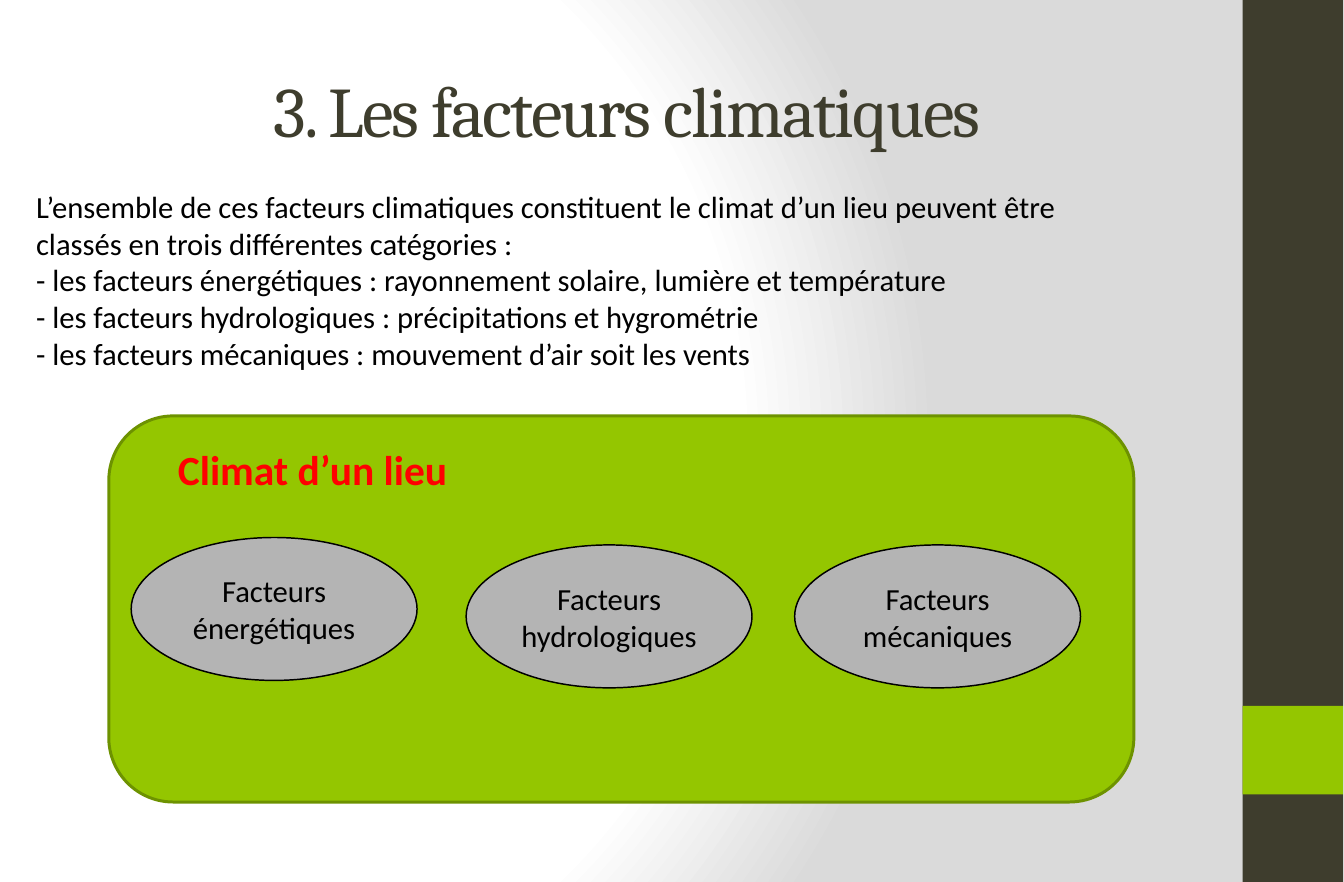
import dataclasses

import pptx
import pptx.dml.color
import pptx.enum.shapes
import pptx.enum.text
import pptx.oxml
import pptx.oxml.ns
import pptx.util

Inches = pptx.util.Inches
Pt = pptx.util.Pt
PresetShape = pptx.enum.shapes.MSO_SHAPE
Anchor = pptx.enum.text.MSO_ANCHOR
Align = pptx.enum.text.PP_ALIGN


@dataclasses.dataclass(frozen=True)
class Theme:
    heading_font: str = "Cambria"
    body_font: str = "Calibri"
    title_size: float = 48
    body_size: float = 20.7
    caption_size: float = 28
    dark: str = "3E3D2D"
    green: str = "94C600"
    green_edge: str = "6D9200"
    grey: str = "B4B4B4"
    backdrop_edge: str = "DADADA"
    white: str = "FFFFFF"
    black: str = "000000"
    red: str = "FF0000"


@dataclasses.dataclass(frozen=True)
class Box:
    left: float
    top: float
    width: float
    height: float

    def lengths(self) -> tuple:
        return tuple(Inches(value) for value in dataclasses.astuple(self))


@dataclasses.dataclass(frozen=True)
class Factor:
    label: str
    left: float
    top: float


THEME = Theme()
WIDTH, HEIGHT = 12.6, 8.27
BAND_LEFT, BAND_WIDTH = 11.65, 0.94
OVAL_WIDTH, OVAL_HEIGHT = 2.68, 1.34
FACTORS = [
    Factor("Facteurs énergétiques", 1.23, 5.04),
    Factor("Facteurs hydrologiques", 4.37, 5.11),
    Factor("Facteurs mécaniques", 7.45, 5.11),
]
INTRODUCTION = [
    "L’ensemble de ces facteurs climatiques constituent le climat d’un lieu "
    "peuvent être classés en trois différentes catégories :",
    "- les facteurs énergétiques : rayonnement solaire, lumière et température",
    "- les facteurs hydrologiques : précipitations et hygrométrie",
    "- les facteurs mécaniques : mouvement d’air soit les vents",
]


def rgb(code: str) -> pptx.dml.color.RGBColor:
    return pptx.dml.color.RGBColor.from_string(code)


def add_run(paragraph, text: str, size: float = THEME.body_size,
            color: str = THEME.black, font: str = THEME.body_font,
            bold: bool = False):
    run = paragraph.add_run()
    run.text = text
    run.font.name = font
    run.font.size = Pt(size)
    run.font.bold = bold
    run.font.color.rgb = rgb(color)
    return run


def add_filled_shape(slide, preset, box: Box, fill: str,
                     edge: str = "", edge_width: float = 1):
    """Add a flat shape; without an edge colour it has no outline."""
    shape = slide.shapes.add_shape(preset, *box.lengths())
    shape.shadow.inherit = False
    shape.fill.solid()
    shape.fill.fore_color.rgb = rgb(fill)
    if edge:
        shape.line.color.rgb = rgb(edge)
        shape.line.width = Pt(edge_width)
    else:
        shape.line.fill.background()
    return shape


def paint_background(slide) -> None:
    """Give the slide a circular gradient centred towards the left."""
    slide.background.fill.solid()
    stops = [(0, THEME.white), (75, THEME.white), (100, THEME.backdrop_edge)]
    stop_xml = "".join(
        f'<a:gs pos="{position * 1000}"><a:srgbClr val="{color}"/></a:gs>'
        for position, color in stops
    )
    gradient = pptx.oxml.parse_xml(
        f'<a:gradFill {pptx.oxml.ns.nsdecls("a")} rotWithShape="1">'
        f'<a:gsLst>{stop_xml}</a:gsLst><a:path path="circle">'
        '<a:fillToRect l="20000" t="50000" r="100000" b="50000"/>'
        '</a:path></a:gradFill>'
    )
    solid = slide.element.xpath(".//p:bgPr/a:solidFill")[0]
    solid.getparent().replace(solid, gradient)


def set_title(slide, text: str) -> None:
    title = slide.shapes.title
    title.left, title.top, title.width, title.height = Box(
        0.63, 0.33, 10.5, 1.38).lengths()
    frame = title.text_frame
    frame.vertical_anchor = Anchor.MIDDLE
    frame.margin_left = frame.margin_right = Inches(0.14)
    frame.margin_top = frame.margin_bottom = Inches(0.07)
    paragraph = frame.paragraphs[0]
    paragraph.alignment = Align.CENTER
    run = add_run(paragraph, text, THEME.title_size, THEME.dark,
                  THEME.heading_font)
    run.font._element.set("spc", "-130")


def add_text_frame(slide, box: Box, wrap: bool):
    frame = slide.shapes.add_textbox(*box.lengths()).text_frame
    frame.word_wrap = wrap
    frame.auto_size = pptx.enum.text.MSO_AUTO_SIZE.SHAPE_TO_FIT_TEXT
    return frame


def add_introduction(slide) -> None:
    frame = add_text_frame(slide, Box(0.24, 1.71, 10.55, 1.85), wrap=True)
    for index, line in enumerate(INTRODUCTION):
        paragraph = frame.add_paragraph() if index else frame.paragraphs[0]
        add_run(paragraph, line)


def add_factor(slide, factor: Factor) -> None:
    box = Box(factor.left, factor.top, OVAL_WIDTH, OVAL_HEIGHT)
    oval = add_filled_shape(slide, PresetShape.OVAL, box, THEME.grey,
                            THEME.black)
    frame = oval.text_frame
    frame.word_wrap = True
    frame.vertical_anchor = Anchor.MIDDLE
    frame.paragraphs[0].alignment = Align.CENTER
    add_run(frame.paragraphs[0], factor.label)


def add_climate_panel(slide) -> None:
    add_filled_shape(slide, PresetShape.ROUNDED_RECTANGLE,
                     Box(1.02, 3.9, 9.61, 3.62), THEME.green,
                     THEME.green_edge, 2)
    for factor in FACTORS:
        add_factor(slide, factor)
    caption = add_text_frame(slide, Box(1.57, 4.11, 2.94, 0.57), wrap=False)
    add_run(caption.paragraphs[0], "Climat d’un lieu", THEME.caption_size,
            THEME.red, bold=True)


def main() -> None:
    presentation = pptx.Presentation()
    presentation.slide_width = Inches(WIDTH)
    presentation.slide_height = Inches(HEIGHT)
    slide = presentation.slides.add_slide(presentation.slide_layouts[5])
    paint_background(slide)
    add_filled_shape(slide, PresetShape.RECTANGLE,
                     Box(BAND_LEFT, 0, BAND_WIDTH, HEIGHT), THEME.dark)
    add_filled_shape(slide, PresetShape.RECTANGLE,
                     Box(BAND_LEFT, 6.62, BAND_WIDTH, 0.83), THEME.green)
    set_title(slide, "3. Les facteurs climatiques")
    add_introduction(slide)
    add_climate_panel(slide)
    presentation.save("out.pptx")


if __name__ == "__main__":
    main()
